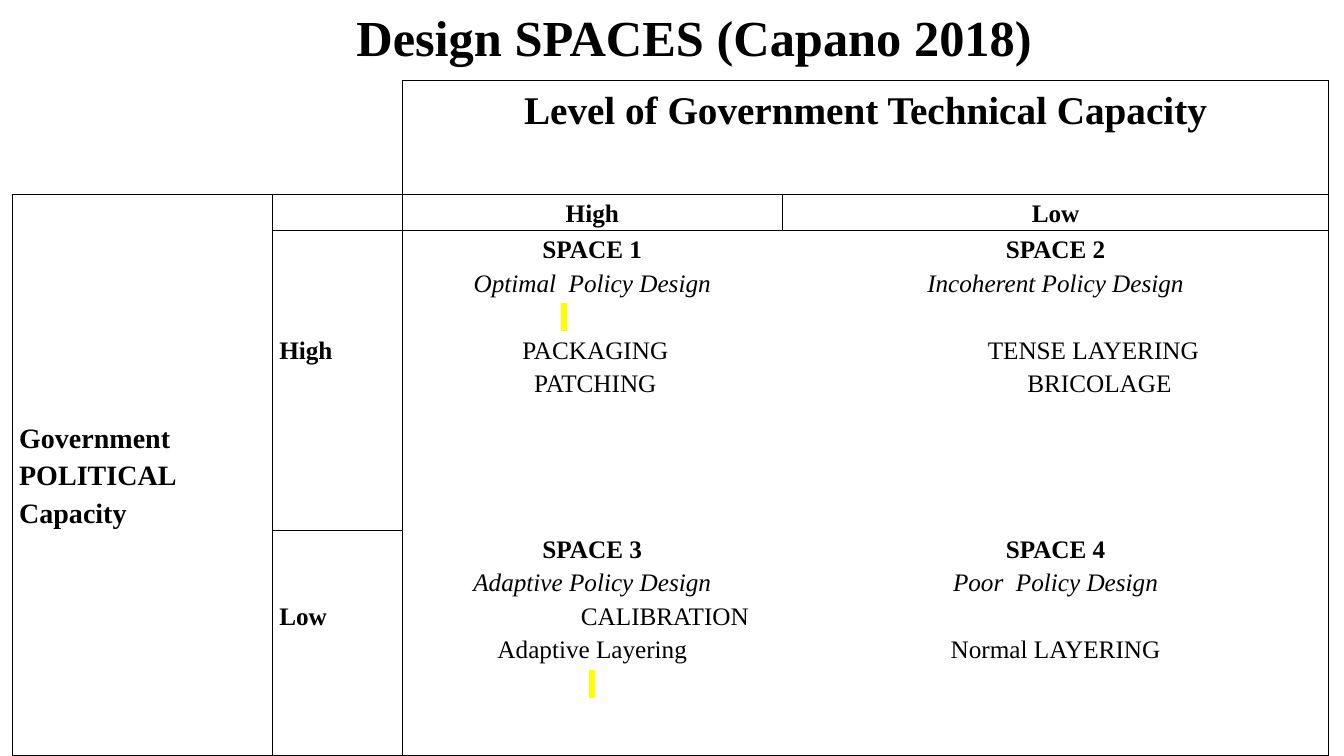
from pptx import Presentation, util as u
from pptx.dml.color import RGBColor
from pptx.enum import text
from pptx.oxml import parse_xml
from pptx.oxml.ns import nsdecls

FONT, BLACK, RED, YELLOW, WHITE = "Times New Roman", "000000", "FF0000", "FFFF00", "FFFFFF"
COLS = (2.58, 1.29, 3.77, 5.42)
ROWS = (1.13, 0.35, 2.97, 2.24)
LINE = 24  # points taken by one line of 18 pt text
ALL = "LTRB"
SIDES = (
    ("RB", "RB", ALL, ALL),
    (ALL, ALL, ALL, ALL),
    (ALL, ALL, "LT", "TR"),
    (ALL, ALL, "LB", "RB"),
)
MERGES = (((0, 0), (0, 1)), ((0, 2), (0, 3)), ((1, 0), (3, 0)))
# row, column: text, size, top margin in inches
HEADINGS = {
    (0, 2): ("Level of Government Technical Capacity", 28, 0),
    (1, 0): ("Government\nPOLITICAL Capacity", 20, 2.21),
    (1, 2): ("High", 18, 0),
    (1, 3): ("Low", 18, 0),
    (2, 1): ("High", 18, 3 * LINE / 72),
    (3, 1): ("Low", 18, 2 * LINE / 72),
}
# row, column: name, design, then (instrument, left indent, right indent, lines skipped)
MARK = "\u00a0"
SPACES = {
    (2, 2): ("SPACE 1", "Optimal  Policy Design", (
        (MARK, 0, 0.56, 0), ("PACKAGING", 0.06, 0, 0), ("PATCHING", 0.06, 0, 0))),
    (2, 3): ("SPACE 2", "Incoherent Policy Design", (
        ("TENSE LAYERING", 0.75, 0, 1), ("BRICOLAGE", 0.87, 0, 0))),
    (3, 2): ("SPACE 3", "Adaptive Policy Design", (
        ("CALIBRATION", 1.44, 0, 0), ("Adaptive Layering", 0, 0, 0), (MARK, 0, 0, 0))),
    (3, 3): ("SPACE 4", "Poor  Policy Design", (("Normal LAYERING", 0, 0, 1),)),
}


def color(value):
    return RGBColor.from_string(value)


def write(p, words, size=18, bold=False, italic=False, align="CENTER", spacing=1.2, ink=BLACK):
    p.alignment = getattr(text.PP_ALIGN, align)
    p.line_spacing = spacing
    f = p.font
    f.name, f.size, f.bold, f.italic = FONT, u.Pt(size), bold, italic
    f.color.rgb = color(ink)
    if words:
        r = p.add_run()
        r.text = words
        return r


def highlight(r):
    """Mark a run in yellow, keeping the order of run properties valid."""
    r.font.color.rgb = color(RED)
    fill = r.font._element.find("{*}solidFill")
    fill.addnext(parse_xml(
        f'<a:highlight {nsdecls("a")}><a:srgbClr val="{YELLOW}"/></a:highlight>'))


def draw_borders(cell, sides):
    """Rule the given sides in black and leave the others open."""
    pr = cell._tc.get_or_add_tcPr()
    for i, side in enumerate("LRTB"):
        paint = (f'<a:solidFill><a:srgbClr val="{BLACK}"/></a:solidFill>'
                 if side in sides else "<a:noFill/>")
        pr.insert(i, parse_xml(f'<a:ln{side} {nsdecls("a")} w="12700">{paint}</a:ln{side}>'))


def fill_heading(cell, key):
    words, size, top = HEADINGS[key]
    cell.margin_top = u.Inches(top)
    align = "JUSTIFY" if key[1] < 2 else "CENTER"
    for i, line in enumerate(words.split("\n")):
        p = cell.text_frame.add_paragraph() if i else cell.text_frame.paragraphs[0]
        write(p, line, size, bold=True, align=align)


def fill_space(cell, name, design, instruments):
    tf = cell.text_frame
    write(tf.paragraphs[0], name, bold=True)
    write(tf.add_paragraph(), design, italic=True)
    for words, left, right, skipped in instruments:
        p = tf.add_paragraph()
        r = write(p, words)
        pr = p._p.get_or_add_pPr()
        pr.set("marL", str(u.Inches(left)))
        pr.set("marR", str(u.Inches(right)))
        p.space_before = u.Pt(skipped * LINE)
        if words == MARK:
            highlight(r)


def add_title(s, x, y, w, h):
    tf = s.shapes.add_textbox(*map(u.Inches, (x, y, w, h))).text_frame
    tf.word_wrap = True
    tf.vertical_anchor = text.MSO_ANCHOR.MIDDLE
    write(tf.paragraphs[0], "Design SPACES (Capano 2018)", 36, bold=True, spacing=0.9)


def add_matrix(s, x, y):
    box = map(u.Inches, (x, y, sum(COLS), sum(ROWS)))
    table = s.shapes.add_table(len(ROWS), len(COLS), *box).table
    table.first_row = table.horz_banding = False
    for column, width in zip(table.columns, COLS):
        column.width = u.Inches(width)
    for row, height in zip(table.rows, ROWS):
        row.height = u.Inches(height)
    for start, end in MERGES:
        table.cell(*start).merge(table.cell(*end))
    for i, row in enumerate(SIDES):
        for j, sides in enumerate(row):
            cell, key = table.cell(i, j), (i, j)
            cell.margin_left = cell.margin_right = u.Inches(0.07)
            cell.margin_top = cell.margin_bottom = 0
            cell.fill.solid()
            cell.fill.fore_color.rgb = color(WHITE)
            draw_borders(cell, sides)
            if key in HEADINGS:
                fill_heading(cell, key)
            elif key in SPACES:
                fill_space(cell, *SPACES[key])
            else:
                write(cell.text_frame.paragraphs[0], "")


def main():
    prs = Presentation()
    prs.slide_width, prs.slide_height = u.Inches(13.33), u.Inches(7.5)
    s = prs.slides.add_slide(prs.slide_layouts[6])
    add_title(s, 2.57, 0, 8.63, 0.8)
    add_matrix(s, 0.12, 0.8)
    prs.save("out.pptx")


if __name__ == "__main__":
    main()
